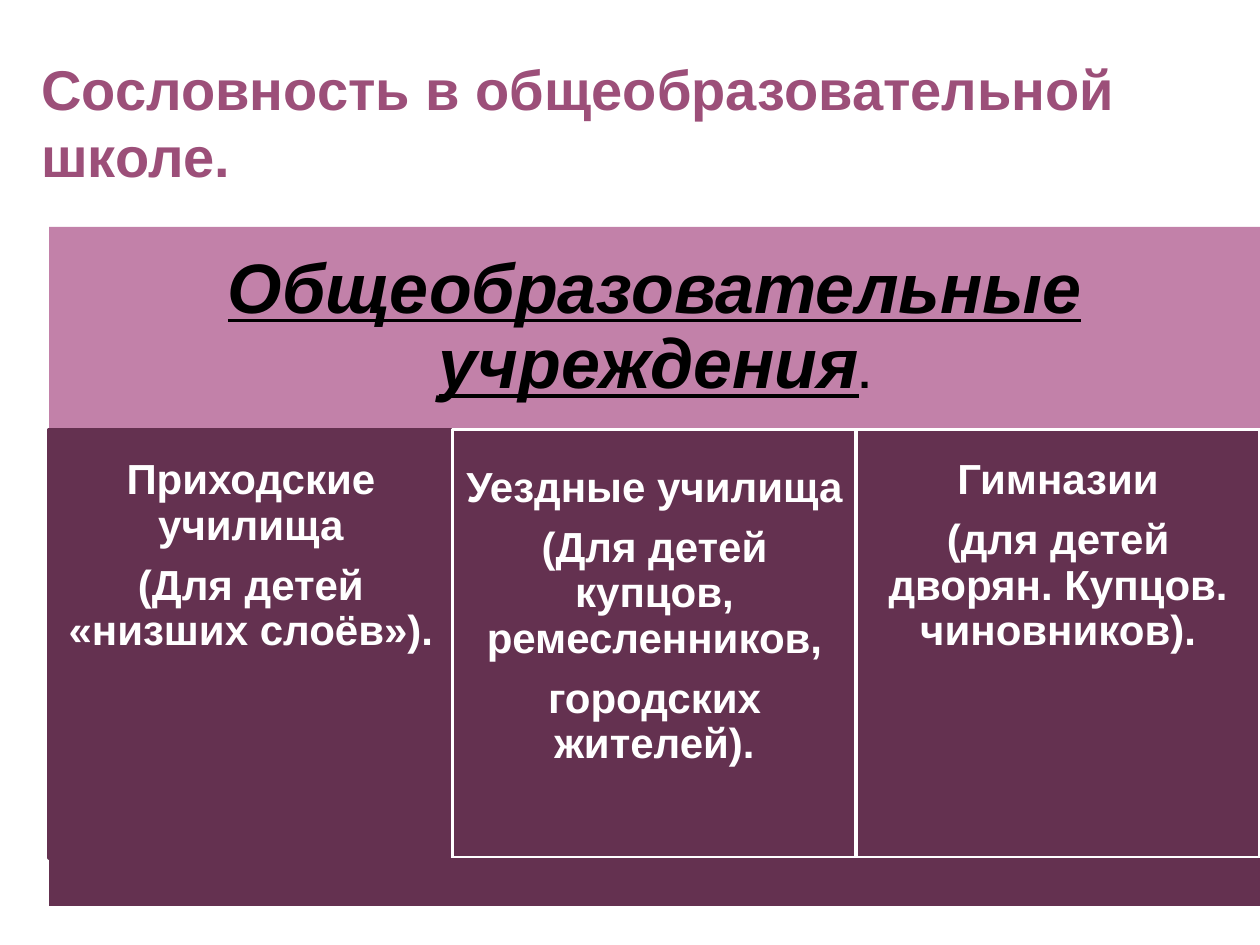
from dataclasses import dataclass

from pptx import Presentation
from pptx.dml.color import RGBColor
from pptx.enum.shapes import MSO_SHAPE
from pptx.enum.text import MSO_ANCHOR, PP_ALIGN
from pptx.slide import Slide
from pptx.util import Inches, Pt


@dataclass(frozen=True)
class Theme:
    font: str = "Arial"
    white: str = "FFFFFF"
    black: str = "000000"
    heading: str = "9C4F79"
    banner: str = "C281A9"
    panel: str = "643150"
    title_size: int = 32
    banner_size: int = 40
    body_size: int = 24


@dataclass(frozen=True)
class Box:
    left: float
    top: float
    width: float
    height: float

    def lengths(self) -> list:
        return [Inches(value) for value in (self.left, self.top, self.width, self.height)]


@dataclass(frozen=True)
class Run:
    text: str
    size: int
    color: str
    italic: bool = False
    underline: bool = False


@dataclass(frozen=True)
class School:
    lines: tuple[str, ...]
    outline: str
    top_inset: float


THEME = Theme()
WIDTH, HEIGHT = 10, 7.5
GRID_LEFT = 0.39
GRID_WIDTH = WIDTH - GRID_LEFT
BANNER_TOP, PANEL_TOP, STRIP_TOP, STRIP_BOTTOM = 1.8, 3.41, 6.81, 7.19

SCHOOLS = (
    School(("Приходские училища", "(Для детей «низших слоёв»)."), THEME.panel, 0.23),
    School(
        ("Уездные училища", "(Для детей купцов, ремесленников,", "городских жителей)."),
        THEME.white,
        0.29,
    ),
    School(("Гимназии", "(для детей дворян. Купцов. чиновников)."), THEME.white, 0.23),
)


def apply_format(target, values: dict) -> None:
    for name, value in values.items():
        setattr(target, name, value)


def add_panel(slide: Slide, box: Box, fill: str, outline: str | None = None):
    shape = slide.shapes.add_shape(MSO_SHAPE.RECTANGLE, *box.lengths())
    shape.shadow.inherit = False
    shape.fill.solid()
    shape.fill.fore_color.rgb = RGBColor.from_string(fill)
    if outline:
        shape.line.color.rgb = RGBColor.from_string(outline)
        shape.line.width = Pt(2)
    else:
        shape.line.fill.background()
    return shape


def write_text(shape, paragraphs: list[list[Run]], frame_format: dict, paragraph_format: dict) -> None:
    frame = shape.text_frame
    apply_format(frame, {"word_wrap": True} | frame_format)
    for index, runs in enumerate(paragraphs):
        paragraph = frame.add_paragraph() if index else frame.paragraphs[0]
        apply_format(paragraph, paragraph_format)
        for item in runs:
            run = paragraph.add_run()
            run.text = item.text
            apply_format(run.font, {
                "name": THEME.font, "size": Pt(item.size), "bold": True,
                "italic": item.italic, "underline": item.underline,
            })
            run.font.color.rgb = RGBColor.from_string(item.color)


def insets(side: float, top: float) -> dict:
    return {
        "margin_left": Inches(side), "margin_right": Inches(side),
        "margin_top": Inches(top), "margin_bottom": Inches(side),
    }


def add_title(slide: Slide) -> None:
    title = slide.shapes.add_textbox(*Box(0.23, 0.16, 9.53, 1.39).lengths())
    run = Run("Сословность в общеобразовательной школе.", THEME.title_size, THEME.heading)
    write_text(title, [[run]], {"vertical_anchor": MSO_ANCHOR.BOTTOM}, {"alignment": PP_ALIGN.LEFT})


def add_banner(slide: Slide) -> None:
    box = Box(GRID_LEFT, BANNER_TOP, GRID_WIDTH, PANEL_TOP - BANNER_TOP)
    runs = [
        Run("Общеобразовательные учреждения", THEME.banner_size, THEME.black, True, True),
        Run(".", THEME.body_size, THEME.black),
    ]
    write_text(
        add_panel(slide, box, THEME.banner),
        [runs],
        {"vertical_anchor": MSO_ANCHOR.MIDDLE} | insets(0.17, 0.17),
        {"alignment": PP_ALIGN.CENTER, "line_spacing": 0.9},
    )


def add_school(slide: Slide, column: int, school: School) -> None:
    width = GRID_WIDTH / len(SCHOOLS)
    box = Box(GRID_LEFT + column * width, PANEL_TOP, width, STRIP_TOP - PANEL_TOP)
    write_text(
        add_panel(slide, box, THEME.panel, school.outline),
        [[Run(line, THEME.body_size, THEME.white)] for line in school.lines],
        {"vertical_anchor": MSO_ANCHOR.TOP} | insets(0.1, school.top_inset),
        {"alignment": PP_ALIGN.CENTER, "line_spacing": 0.9, "space_after": Pt(0.35 * THEME.body_size)},
    )


def main() -> None:
    presentation = Presentation()
    apply_format(presentation, {"slide_width": Inches(WIDTH), "slide_height": Inches(HEIGHT)})
    slide = presentation.slides.add_slide(presentation.slide_layouts[6])
    add_title(slide)
    add_banner(slide)
    for column, school in enumerate(SCHOOLS):
        add_school(slide, column, school)
    add_panel(slide, Box(GRID_LEFT, STRIP_TOP, GRID_WIDTH, STRIP_BOTTOM - STRIP_TOP), THEME.panel)
    presentation.save("out.pptx")


if __name__ == "__main__":
    main()
